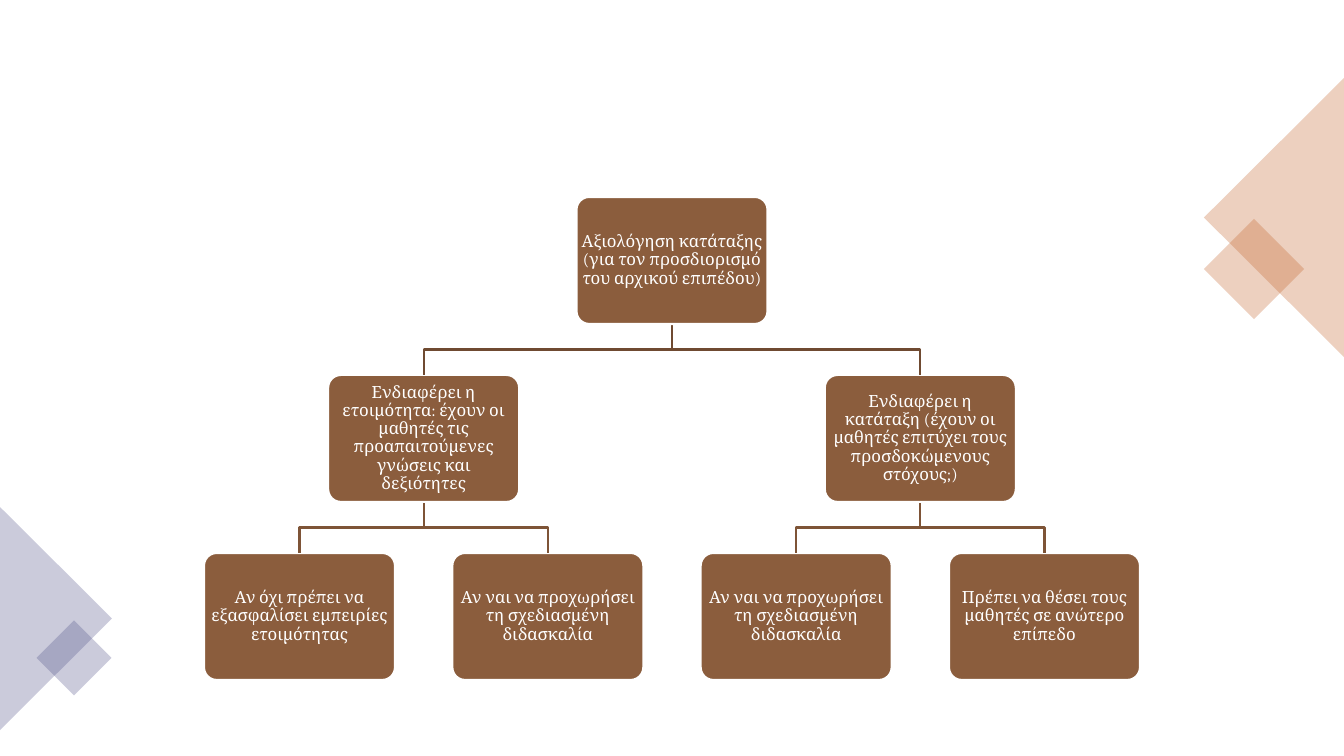
from lxml.etree import SubElement
from pptx import Presentation
from pptx.dml.color import RGBColor
from pptx.enum.shapes import MSO_SHAPE
from pptx.enum.text import MSO_ANCHOR, PP_ALIGN
from pptx.oxml.ns import qn
from pptx.util import Emu, Pt

SLIDE_W, SLIDE_H = 1344, 756
EMU_PER_PX = 12192000 / SLIDE_W

NODE_W, NODE_H = 191, 127
NODE_FILL = "8B5D3D"
LINK_COLOURS = ["6F4A31", "7E5437"]

# Each node is its text and its children.
DECISION_TREE = ("Αξιολόγηση κατάταξης (για τον προσδιορισμό του αρχικού επιπέδου)", [
    ("Ενδιαφέρει η ετοιμότητα: έχουν οι μαθητές τις προαπαιτούμενες γνώσεις και δεξιότητες", [
        ("Αν όχι πρέπει να εξασφαλίσει εμπειρίες ετοιμότητας", []),
        ("Αν ναι να προχωρήσει τη σχεδιασμένη διδασκαλία", []),
    ]),
    ("Ενδιαφέρει η κατάταξη (έχουν οι μαθητές επιτύχει τους προσδοκώμενους στόχους;)", [
        ("Αν ναι να προχωρήσει τη σχεδιασμένη διδασκαλία", []),
        ("Πρέπει να θέσει τους μαθητές σε ανώτερο επίπεδο", []),
    ]),
])


def px(length):
    return Emu(round(length * EMU_PER_PX))


def colour(hex_value):
    return RGBColor.from_string(hex_value)


def add_filled(slide, preset, box, fill):
    shape = slide.shapes.add_shape(preset, *(px(length) for length in box))
    shape.shadow.inherit = False
    shape.fill.solid()
    shape.fill.fore_color.rgb = colour(fill)
    shape.line.fill.background()
    return shape


def add_translucent(slide, preset, centre, size, rotation, fill):
    """Place a turned, 30 % opaque shape around its centre."""
    (x, y), (width, height) = centre, size
    box = (x - width / 2, y - height / 2, width, height)
    shape = add_filled(slide, preset, box, fill)
    shape.rotation = rotation
    rgb = shape.element.spPr.find(f"{qn('a:solidFill')}/{qn('a:srgbClr')}")
    SubElement(rgb, qn("a:alpha"), val="30000")


def add_corner(slide, box, rotation, square_offset, square_side, fill):
    """Fill the box with a sideways triangle and set a diamond over it."""
    left, top, width, height = box
    add_translucent(slide, MSO_SHAPE.ISOSCELES_TRIANGLE,
                    (left + width / 2, top + height / 2),
                    (height, width), rotation, fill)
    dx, dy = square_offset
    add_translucent(slide, MSO_SHAPE.RECTANGLE, (left + dx, top + dy),
                    (square_side, square_side), 45, fill)


def add_node(slide, centre_x, top, text):
    box = (centre_x - NODE_W / 2, top, NODE_W, NODE_H)
    node = add_filled(slide, MSO_SHAPE.ROUNDED_RECTANGLE, box, NODE_FILL)
    node.adjustments[0] = 0.1
    node.line.color.rgb = colour("FFFFFF")
    node.line.width = Pt(1.5)

    frame = node.text_frame
    frame.word_wrap = True
    frame.vertical_anchor = MSO_ANCHOR.MIDDLE
    frame.margin_left = frame.margin_right = px(1)
    frame.margin_top = frame.margin_bottom = px(1)
    paragraph = frame.paragraphs[0]
    paragraph.alignment = PP_ALIGN.CENTER
    paragraph.line_spacing = 0.9
    run = paragraph.add_run()
    run.text = text
    run.font.name = "Cambria"
    run.font.size = Pt(12)
    run.font.color.rgb = colour("FFFFFF")


def add_link(slide, start, end, line_colour):
    """Draw an open elbow that turns halfway between two levels."""
    (x1, y1), (x2, y2) = start, end
    middle = (y1 + y2) / 2
    builder = slide.shapes.build_freeform(px(x1), px(y1))
    corners = [(x1, middle), (x2, middle), (x2, y2)]
    builder.add_line_segments([(px(x), px(y)) for x, y in corners], close=False)
    link = builder.convert_to_shape()
    link.shadow.inherit = False
    link.fill.background()
    link.line.color.rgb = colour(line_colour)
    link.line.width = Pt(1.5)


def count_leaves(node):
    return sum(map(count_leaves, node[1])) or 1


def add_tree(slide, box, tree, levels):
    left, top, width, height = box
    leaf_step = (width - NODE_W) / (count_leaves(tree) - 1)
    level_step = (height - NODE_H) / (levels - 1)

    def place(node, first_leaf, level):
        text, children = node
        span = count_leaves(node)
        x = left + NODE_W / 2 + (first_leaf + (span - 1) / 2) * leaf_step
        y = top + level * level_step
        for child in children:
            child_x = place(child, first_leaf, level + 1)
            add_link(slide, (x, y + NODE_H), (child_x, y + level_step),
                     LINK_COLOURS[level])
            first_leaf += count_leaves(child)
        add_node(slide, x, y, text)
        return x

    place(tree, 0, 0)


def main():
    presentation = Presentation()
    presentation.slide_width = px(SLIDE_W)
    presentation.slide_height = px(SLIDE_H)
    slide = presentation.slides.add_slide(presentation.slide_layouts[6])
    add_corner(slide, (1204, 78, 140, 279), 270, (50, 191), 71, "C4652D")
    add_corner(slide, (0, 507, 112, 223), 90, (74, 151), 53, "53548A")
    add_tree(slide, (204, 197, 936, 483), DECISION_TREE, 3)
    presentation.save("out.pptx")


if __name__ == "__main__":
    main()
